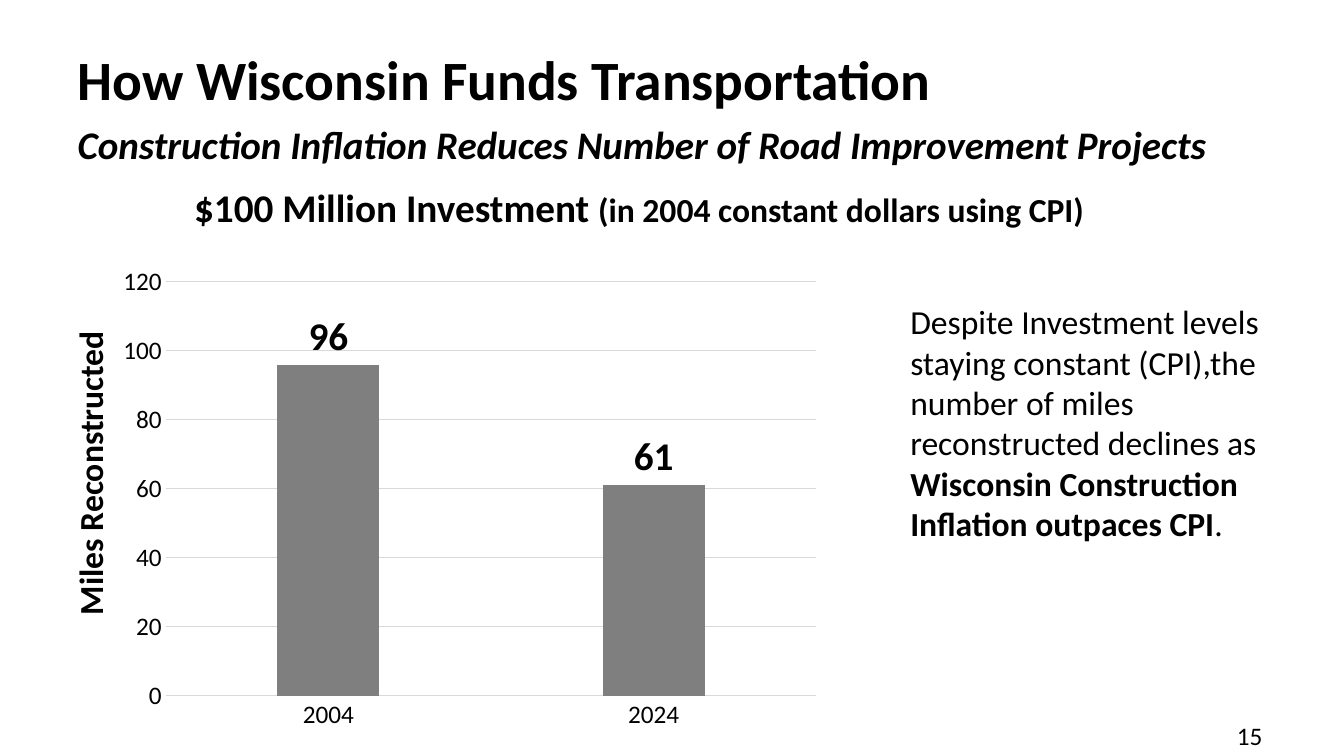
from pptx import Presentation
from pptx.chart.data import CategoryChartData
from pptx.dml.color import RGBColor
from pptx.enum.chart import XL_CHART_TYPE, XL_LABEL_POSITION, XL_TICK_MARK
from pptx.enum.text import MSO_ANCHOR, PP_ALIGN
from pptx.util import Inches, Pt

COLUMN = XL_CHART_TYPE.COLUMN_CLUSTERED
OUTSIDE_END = XL_LABEL_POSITION.OUTSIDE_END
NO_TICK = XL_TICK_MARK.NONE
MIDDLE = MSO_ANCHOR.MIDDLE
LEFT, CENTER = PP_ALIGN.LEFT, PP_ALIGN.CENTER

BLACK = RGBColor(0x00, 0x00, 0x00)
GRAY = RGBColor(0x7F, 0x7F, 0x7F)
GRID = RGBColor(0xD9, 0xD9, 0xD9)
FONT = "Calibri"

TITLE_BOX = (0.67, 0.48, 12, 1.25)
TITLE = ("How Wisconsin Funds Transportation", 39.6, True, False)
SUBTITLE = ("Construction Inflation Reduces Number of Road Improvement Projects",
            27.9, True, True)

# (box, rotation, alignment, runs of text, size, bold, italic)
TEXTS = [
    ((0.77, 1.77, 11.14, 0.57), 0, CENTER, [
        ("$100 Million Investment ", 28, True, False),
        ("(in 2004 constant dollars using CPI)", 24, True, False)]),
    ((-1.04, 4.02, 3.86, 0.5), 270, LEFT, [
        ("Miles Reconstructed", 24, True, False)]),
    ((8.93, 2.94, 3.73, 2.52), 0, LEFT, [
        ("Despite Investment levels staying constant (CPI),the number of miles "
         "reconstructed declines as ", 24, False, False),
        ("Wisconsin Construction Inflation outpaces CPI", 24, True, False),
        (".", 24, False, False)]),
    ((12.17, 7.1, 1, 0.4), 0, LEFT, [("15", 18, False, False)]),
]

CHART_BOX = (1.08, 2.55, 7.16, 4.79)
MILES = {"2004": 96, "2024": 61}


def style(font, size, bold=False, italic=False):
    font.name = FONT
    font.size = Pt(size)
    font.bold = bold
    font.italic = italic
    font.color.rgb = BLACK


def add_run(p, text, size, bold, italic):
    r = p.add_run()
    r.text = text
    style(r.font, size, bold, italic)


def add_title(slide):
    sp = slide.shapes.title
    sp.left, sp.top, sp.width, sp.height = map(Inches, TITLE_BOX)
    tf = sp.text_frame
    tf.vertical_anchor = MIDDLE
    p = tf.paragraphs[0]
    p.alignment = LEFT
    p.line_spacing = Pt(40)
    add_run(p, *TITLE)
    p.add_line_break()
    add_run(p, *SUBTITLE)


def add_text(slide, box, rotation, alignment, runs):
    sp = slide.shapes.add_textbox(*map(Inches, box))
    sp.rotation = rotation
    tf = sp.text_frame
    tf.word_wrap = True
    p = tf.paragraphs[0]
    p.alignment = alignment
    for run in runs:
        add_run(p, *run)


def add_miles_chart(slide):
    data = CategoryChartData()
    data.categories = list(MILES)
    data.add_series("Series 1", list(MILES.values()))
    chart = slide.shapes.add_chart(COLUMN, *map(Inches, CHART_BOX), data).chart
    chart.has_title = False
    chart.has_legend = False
    style(chart.font, 10)

    for axis in (chart.category_axis, chart.value_axis):
        axis.major_tick_mark = NO_TICK
        axis.minor_tick_mark = NO_TICK
        style(axis.tick_labels.font, 18)

    values = chart.value_axis
    values.minimum_scale, values.maximum_scale, values.major_unit = 0, 120, 20
    values.format.line.fill.background()
    for line in (chart.category_axis.format.line,
                 values.major_gridlines.format.line):
        line.color.rgb = GRID
        line.width = Pt(0.75)

    plot = chart.plots[0]
    plot.gap_width = 219
    plot.overlap = -27
    plot.vary_by_categories = False
    series = plot.series[0]
    series.format.fill.solid()
    series.format.fill.fore_color.rgb = GRAY
    labels = series.data_labels
    labels.show_value = True
    labels.position = OUTSIDE_END
    style(labels.font, 28, bold=True)


def main():
    prs = Presentation()
    prs.slide_width, prs.slide_height = Inches(13.33), Inches(7.5)
    slide = prs.slides.add_slide(prs.slide_layouts[5])
    add_title(slide)
    add_miles_chart(slide)
    for text in TEXTS:
        add_text(slide, *text)
    prs.save("out.pptx")


if __name__ == "__main__":
    main()
